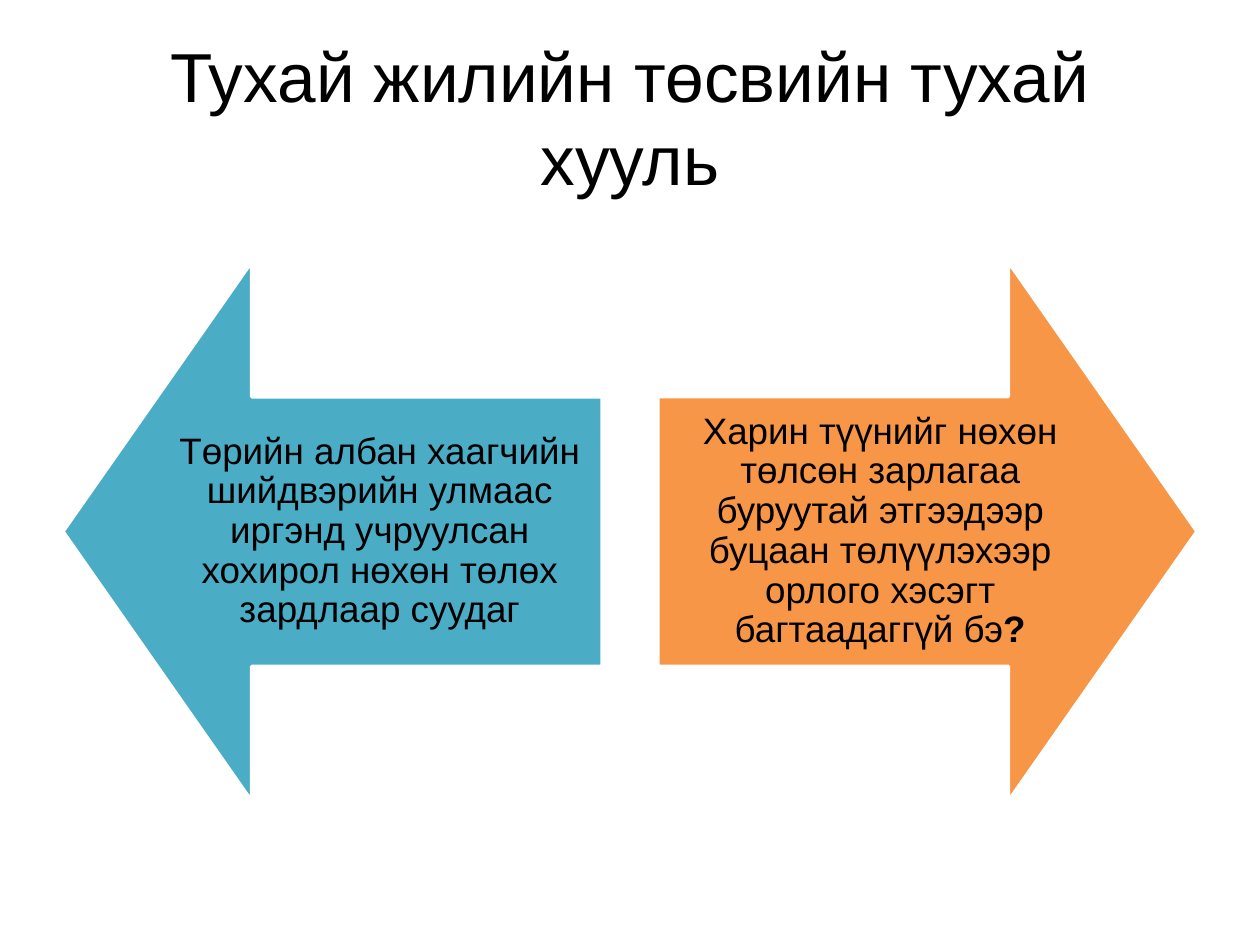
from pptx import Presentation
from pptx.dml.color import RGBColor
from pptx.enum.shapes import MSO_SHAPE as Shape
from pptx.enum.text import MSO_ANCHOR as Anchor, MSO_AUTO_SIZE as AutoSize, PP_ALIGN as Align
from pptx.util import Cm, Pt

BLACK = RGBColor(0x00, 0x00, 0x00)
WHITE = RGBColor(0xFF, 0xFF, 0xFF)
TEAL = RGBColor(0x4B, 0xAC, 0xC6)
ORANGE = RGBColor(0xF7, 0x96, 0x46)

SLIDE_WIDTH, SLIDE_HEIGHT = 25.4, 19.05
MARGIN = 1.27
ARROW_TOP, ARROW_SIZE = 5.28, 10.87
SHAFT_RATIO, HEAD_RATIO = 0.5, 0.35
TEXT_INSET = Cm(0.41)


def format_runs(para, size):
    para.alignment = Align.CENTER
    for span in para.runs:
        span.font.name = "Arial"
        span.font.size = Pt(size)
        span.font.color.rgb = BLACK


def set_title(page, text):
    title = page.shapes.title
    title.left, title.top = Cm(MARGIN), Cm(0.76)
    title.width, title.height = Cm(SLIDE_WIDTH - 2 * MARGIN), Cm(3.18)
    frame = title.text_frame
    frame.text = text
    frame.word_wrap = True
    frame.auto_size = AutoSize.NONE
    frame.vertical_anchor = Anchor.MIDDLE
    format_runs(frame.paragraphs[0], 39.6)


def add_arrow(page, left, rotation, color):
    arrow = page.shapes.add_shape(
        Shape.UP_ARROW, Cm(left), Cm(ARROW_TOP), Cm(ARROW_SIZE), Cm(ARROW_SIZE))
    arrow.rotation = rotation
    arrow.adjustments[0] = SHAFT_RATIO
    arrow.adjustments[1] = HEAD_RATIO
    arrow.shadow.inherit = False
    arrow.fill.solid()
    arrow.fill.fore_color.rgb = color
    arrow.line.color.rgb = WHITE
    arrow.line.width = Pt(2)


def add_arrow_text(page, left, text, bold_ending=""):
    """Fill the arrow's shaft and the half of its head nearest to it."""
    width = ARROW_SIZE * (1 - HEAD_RATIO / 2)
    height = ARROW_SIZE * SHAFT_RATIO
    top = ARROW_TOP + (ARROW_SIZE - height) / 2
    box = page.shapes.add_textbox(Cm(left), Cm(top), Cm(width), Cm(height))
    frame = box.text_frame
    frame.word_wrap = True
    frame.vertical_anchor = Anchor.MIDDLE
    frame.margin_left = frame.margin_right = TEXT_INSET
    frame.margin_top = frame.margin_bottom = TEXT_INSET
    para = frame.paragraphs[0]
    para.text = text
    para.line_spacing = 0.9
    if bold_ending:
        span = para.add_run()
        span.text = bold_ending
        span.font.bold = True
    format_runs(para, 21)


def main():
    deck = Presentation()
    deck.slide_width, deck.slide_height = Cm(SLIDE_WIDTH), Cm(SLIDE_HEIGHT)
    page = deck.slides.add_slide(deck.slide_layouts[5])
    set_title(page, "Тухай жилийн төсвийн тухай хууль")

    left_arrow = MARGIN
    add_arrow(page, left_arrow, 270, TEAL)
    add_arrow_text(
        page, left_arrow + ARROW_SIZE * HEAD_RATIO / 2,
        "Төрийн албан хаагчийн шийдвэрийн улмаас иргэнд учруулсан "
        "хохирол нөхөн төлөх зардлаар суудаг")

    right_arrow = SLIDE_WIDTH - MARGIN - ARROW_SIZE
    add_arrow(page, right_arrow, 90, ORANGE)
    add_arrow_text(
        page, right_arrow,
        "Харин түүнийг нөхөн төлсөн зарлагаа буруутай этгээдээр "
        "буцаан төлүүлэхээр орлого хэсэгт багтаадаггүй бэ", "?")

    deck.save("out.pptx")


if __name__ == "__main__":
    main()
